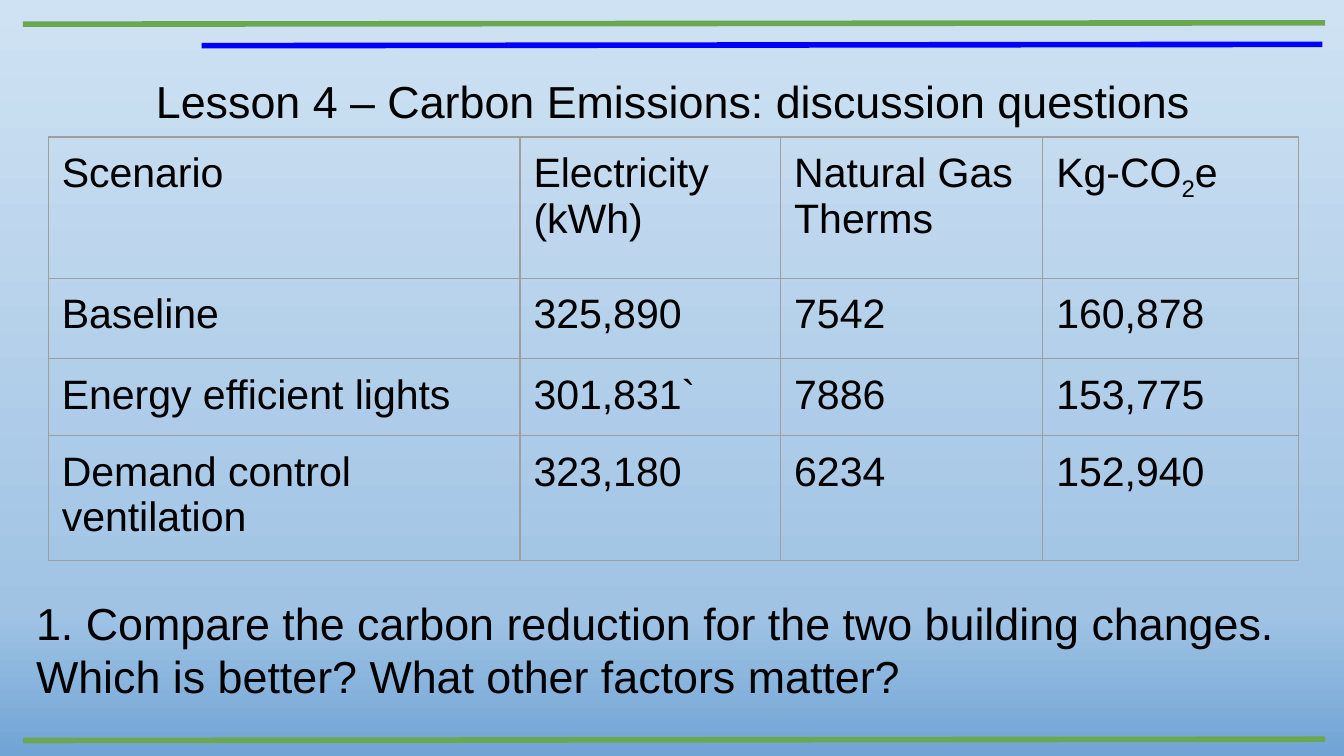
from copy import deepcopy

from pptx import Presentation
from pptx.dml.color import RGBColor
from pptx.enum.shapes import MSO_CONNECTOR
from pptx.enum.text import MSO_ANCHOR, MSO_AUTO_SIZE, PP_ALIGN
from pptx.oxml import parse_xml
from pptx.oxml.ns import nsdecls, qn
from pptx.util import Inches, Pt

STRAIGHT = MSO_CONNECTOR.STRAIGHT
TOP = MSO_ANCHOR.TOP
NO_AUTOFIT = MSO_AUTO_SIZE.NONE
LEFT, CENTER = PP_ALIGN.LEFT, PP_ALIGN.CENTER

FONT = "Arial"
INSET = Inches(0.1)
COLORS = {
    "text": "000000",
    "green": "6AA84F",
    "blue": "0000FF",
    "grid": "9E9E9E",
    "sky_top": "CFE2F3",
    "sky_middle": "A0C3E4",
    "sky_bottom": "70A4D5",
}
SUBSCRIPTS = {"2": -25000}

# Each cell is a list of paragraphs, each paragraph a list of runs.
HEADINGS = [
    [["Scenario"]],
    [["Electricity"], ["(kWh)"]],
    [["Natural Gas"], ["Therms"]],
    [["Kg-CO", "2", "e"]],
]
SCENARIOS = [
    ("Baseline", "325,890", "7542", "160,878"),
    ("Energy efficient lights", "301,831`", "7886", "153,775"),
    ("Demand control ventilation", "323,180", "6234", "152,940"),
]
COLUMN_WIDTHS = [3.51, 1.94, 1.95, 1.9]
ROW_HEIGHTS = [1.05, 0.6, 0.57, 0.93]


def rgb(name):
    return RGBColor.from_string(COLORS[name])


def paint_background(slide):
    fill = slide.background.fill
    fill.gradient()
    fill.gradient_angle = 270
    stop_list = next(slide.element.iter(qn("a:gsLst")))
    stop_list.insert(1, deepcopy(stop_list[0]))
    sky = [(0, "sky_top"), (0.81, "sky_middle"), (1, "sky_bottom")]
    for stop, (position, color) in zip(fill.gradient_stops, sky):
        stop.position = position
        stop.color.rgb = rgb(color)


def add_rule(slide, left, right, y, color):
    """Draw a rule that rises by a hundredth of an inch to the right."""
    rule = slide.shapes.add_connector(
        STRAIGHT, Inches(left), Inches(y), Inches(right), Inches(y - 0.01))
    rule.line.color.rgb = rgb(color)
    rule.line.width = Pt(3)
    rule._element.spPr.append(parse_xml(f"<a:effectLst {nsdecls('a')}/>"))


def add_run(paragraph, text, size):
    run = paragraph.add_run()
    run.text = text
    run.font.name = FONT
    run.font.size = Pt(size)
    run.font.bold = False
    run.font.color.rgb = rgb("text")
    return run


def fill_text_box(shape, box, text, align):
    shape.left, shape.top, shape.width, shape.height = map(Inches, box)
    frame = shape.text_frame
    frame.word_wrap = True
    frame.auto_size = NO_AUTOFIT
    frame.vertical_anchor = TOP
    frame.margin_left = frame.margin_right = INSET
    frame.margin_top = frame.margin_bottom = INSET
    paragraph = frame.paragraphs[0]
    paragraph.alignment = align
    add_run(paragraph, text, 24)


def outline_cell(cell):
    properties = cell._tc.get_or_add_tcPr()
    for index, side in enumerate(("lnL", "lnR", "lnT", "lnB")):
        properties.insert(index, parse_xml(
            f'<a:{side} {nsdecls("a")} w="{Pt(0.75)}"><a:solidFill>'
            f'<a:srgbClr val="{COLORS["grid"]}"/></a:solidFill></a:{side}>'))


def fill_cell(cell, paragraphs):
    cell.margin_left = cell.margin_right = INSET
    cell.margin_top = cell.margin_bottom = INSET
    cell.vertical_anchor = TOP
    cell.fill.background()
    outline_cell(cell)
    frame = cell.text_frame
    for index, runs in enumerate(paragraphs):
        paragraph = frame.add_paragraph() if index else frame.paragraphs[0]
        for text in runs:
            run = add_run(paragraph, text, 22)
            if text in SUBSCRIPTS:
                run.font._element.set("baseline", str(SUBSCRIPTS[text]))


def add_emissions_table(slide, left, top):
    rows = [HEADINGS] + [[[[value]] for value in row] for row in SCENARIOS]
    table = slide.shapes.add_table(
        len(rows), len(COLUMN_WIDTHS), Inches(left), Inches(top),
        Inches(sum(COLUMN_WIDTHS)), Inches(sum(ROW_HEIGHTS))).table
    table.first_row = table.horz_banding = False
    for column, width in zip(table.columns, COLUMN_WIDTHS):
        column.width = Inches(width)
    for row, height, contents in zip(table.rows, ROW_HEIGHTS, rows):
        row.height = Inches(height)
        for cell, paragraphs in zip(row.cells, contents):
            fill_cell(cell, paragraphs)


def build_discussion_slide(presentation):
    slide = presentation.slides.add_slide(presentation.slide_layouts[5])
    paint_background(slide)
    add_rule(slide, 0.17, 9.86, 0.18, "green")
    add_rule(slide, 0.17, 9.86, 5.51, "green")
    add_rule(slide, 1.5, 9.84, 0.34, "blue")
    fill_text_box(slide.shapes.title, (0.24, 0.45, 9.53, 0.61),
                  "Lesson 4 – Carbon Emissions: discussion questions", CENTER)
    add_emissions_table(slide, 0.36, 1.02)
    question = slide.shapes.add_textbox(0, 0, 0, 0)
    fill_text_box(question, (0.17, 4.33, 9.53, 1.01),
                  "1. Compare the carbon reduction for the two building changes. "
                  "Which is better? What other factors matter?", LEFT)


def main():
    presentation = Presentation()
    presentation.slide_width = Inches(10)
    presentation.slide_height = presentation.slide_width * 9 // 16
    build_discussion_slide(presentation)
    presentation.save("out.pptx")


if __name__ == "__main__":
    main()
